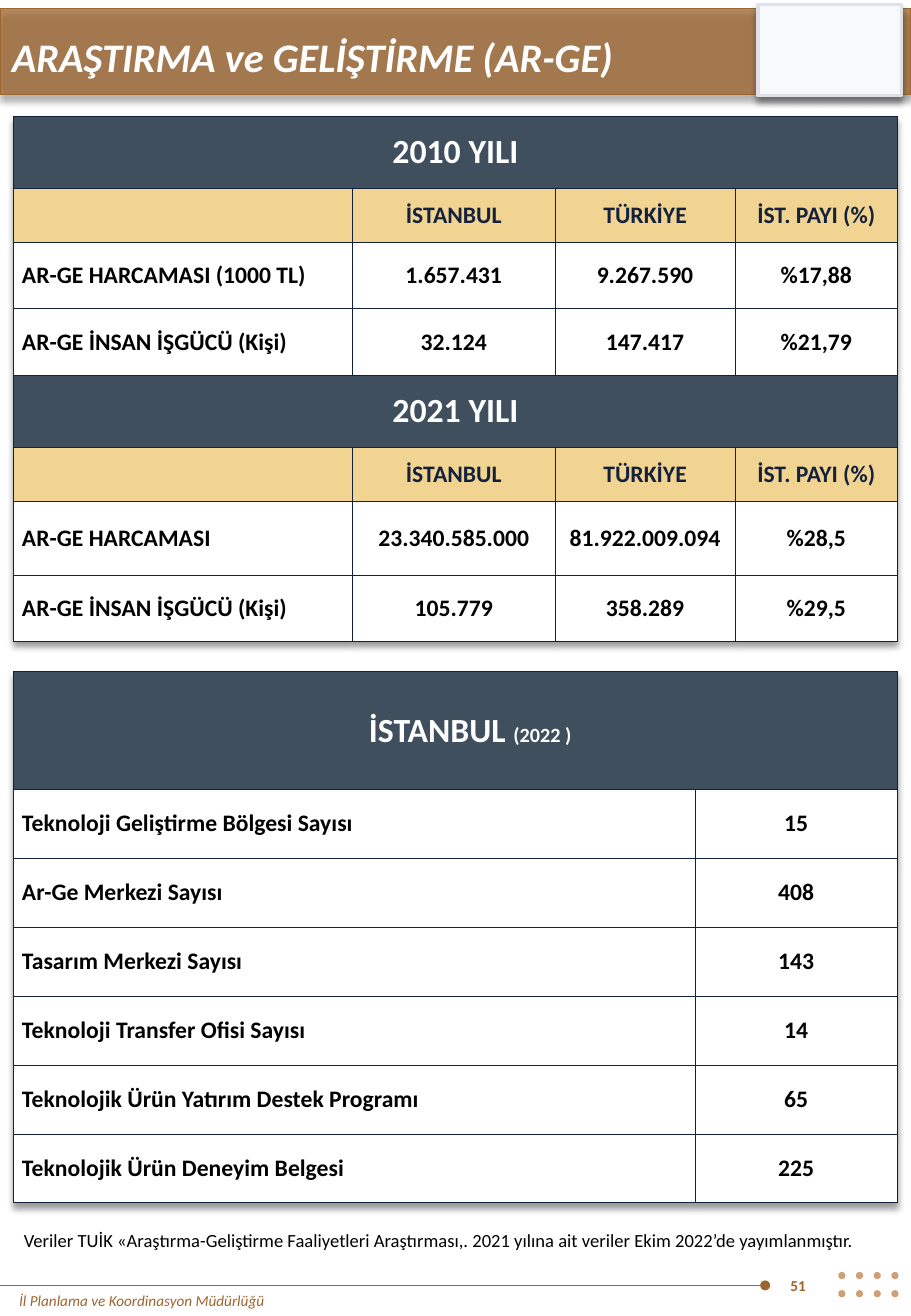
from lxml import etree
from pptx import Presentation
from pptx.dml.color import RGBColor
from pptx.enum import shapes, text
from pptx.oxml import ns, parse_xml
from pptx.util import Cm, Pt

# Content
TITLE = "ARAŞTIRMA ve GELİŞTİRME (AR-GE)"
OFFICE = "İl Planlama ve Koordinasyon Müdürlüğü"
PAGE = "51"
NOTE = ("Veriler TUİK «Araştırma-Geliştirme Faaliyetleri Araştırması,. "
        "2021 yılına ait veriler Ekim 2022’de yayımlanmıştır.")
HEADINGS = ["", "İSTANBUL", "TÜRKİYE", "İST. PAYI (%)"]
SPENDING = [
    ["2010 YILI"],
    HEADINGS,
    ["AR-GE HARCAMASI (1000 TL)", "1.657.431", "9.267.590", "%17,88"],
    ["AR-GE İNSAN İŞGÜCÜ (Kişi)", "32.124", "147.417", "%21,79"],
    ["2021 YILI"],
    HEADINGS,
    ["AR-GE HARCAMASI", "23.340.585.000", "81.922.009.094", "%28,5"],
    ["AR-GE İNSAN İŞGÜCÜ (Kişi)", "105.779", "358.289", "%29,5"],
]
CENTRES = [
    ["İSTANBUL "],
    ["Teknoloji Geliştirme Bölgesi Sayısı", "15"],
    ["Ar-Ge Merkezi Sayısı", "408"],
    ["Tasarım Merkezi Sayısı", "143"],
    ["Teknoloji Transfer Ofisi Sayısı", "14"],
    ["Teknolojik Ürün Yatırım Destek Programı", "65"],
    ["Teknolojik Ürün Deneyim Belgesi", "225"],
]
CENTRES_YEAR = "(2022 )"

# Colours
BROWN = RGBColor(0x9E, 0x65, 0x2E)
TAN = RGBColor(0xCD, 0xA0, 0x77)
SLATE = RGBColor(0x40, 0x4F, 0x5D)
SAND = RGBColor(0xF2, 0xD4, 0x92)
NAVY = RGBColor(0x14, 0x21, 0x3D)
PALE = RGBColor(0xF8, 0xF9, 0xFA)
GREY = RGBColor(0xDE, 0xE2, 0xE6)
WHITE = RGBColor(0xFF, 0xFF, 0xFF)
BLACK = RGBColor(0, 0, 0)

FONT = "Calibri"
WIDTH, HEIGHT = 19.05, 27.51
MIDDLE = text.MSO_ANCHOR.MIDDLE
CENTER = text.PP_ALIGN.CENTER


def soft_shadow():
    return parse_xml(
        f'<a:effectLst {ns.nsdecls("a")}><a:outerShdw blurRad="50800" dist="38100" '
        'dir="5400000" algn="t" rotWithShape="0"><a:srgbClr val="000000">'
        '<a:alpha val="40000"/></a:srgbClr></a:outerShdw></a:effectLst>')


def style(r, size, color, bold=False, italic=False):
    r.font.name, r.font.size = FONT, Pt(size)
    r.font.bold, r.font.italic = bold, italic
    r.font.color.rgb = color


def add_shape(s, kind, box, fill, line=None, weight=1):
    sp = s.shapes.add_shape(kind, *map(Cm, box))
    sp.shadow.inherit = False
    sp.fill.solid()
    sp.fill.fore_color.rgb = fill
    if line is None:
        sp.line.fill.background()
    else:
        sp.line.color.rgb, sp.line.width = line, Pt(weight)
    return sp


def add_panel(s, box, fill, line, weight):
    sp = add_shape(s, shapes.MSO_SHAPE.RECTANGLE, box, fill, line, weight)
    props = sp._element.spPr
    props.replace(props.find(ns.qn("a:effectLst")), soft_shadow())
    return sp


def add_text(s, box, words, size, color, **look):
    tf = s.shapes.add_textbox(*map(Cm, box)).text_frame
    tf.word_wrap, tf.vertical_anchor = True, MIDDLE
    tf.text = words
    style(tf.paragraphs[0].runs[0], size, color, **look)


def fill_cell(cell, words, fill, size, color, centred):
    props = cell._tc.get_or_add_tcPr()
    for side in ("lnL", "lnR", "lnT", "lnB"):
        props.append(parse_xml(
            f'<a:{side} {ns.nsdecls("a")} w="3175"><a:solidFill>'
            f'<a:srgbClr val="{NAVY}"/></a:solidFill></a:{side}>'))
    cell.fill.solid()
    cell.fill.fore_color.rgb = fill
    cell.vertical_anchor = MIDDLE
    cell.margin_left = cell.margin_right = Cm(0.18)
    cell.margin_top = cell.margin_bottom = Cm(0.1)
    cell.text = words
    p = cell.text_frame.paragraphs[0]
    p.alignment = CENTER if centred else text.PP_ALIGN.LEFT
    for r in p.runs:
        style(r, size, color, bold=True)


def add_grid(s, top, widths, heights, rows):
    table = s.shapes.add_table(len(rows), len(widths), Cm(0.28), Cm(top),
                               Cm(sum(widths)), Cm(sum(heights))).table
    table.first_row = table.horz_banding = False
    table._tbl.tblPr.insert(0, soft_shadow())
    for column, width in zip(table.columns, widths):
        column.width = Cm(width)
    for i, (row, height) in enumerate(zip(rows, heights)):
        table.rows[i].height = Cm(height)
        banner = len(row) == 1
        if banner:
            look = SLATE, 20, WHITE
            table.cell(i, 0).merge(table.cell(i, len(widths) - 1))
        elif row is HEADINGS:
            look = SAND, 14, NAVY
        else:
            look = WHITE, 14, BLACK
        for j, words in enumerate(row):
            fill_cell(table.cell(i, j), words, *look, centred=banner or j > 0)
    return table


prs = Presentation()
prs.slide_width, prs.slide_height = Cm(WIDTH), Cm(HEIGHT)
s = prs.slides.add_slide(prs.slide_layouts[6])

# Title bar with an empty badge
bar = add_panel(s, (0, 0.18, WIDTH, 1.8), BROWN, BROWN, 1)
bar_color = bar._element.spPr.find(ns.qn("a:solidFill"))[0]
etree.SubElement(bar_color, ns.qn("a:alpha")).set("val", "75000")
add_panel(s, (15.85, 0.1, 3, 1.9), PALE, GREY, 2)
add_text(s, (0, 0.54, 15.8, 1.27), TITLE, 24, WHITE, bold=True, italic=True)

# Footer rule, dots and labels
rule = s.shapes.add_connector(shapes.MSO_CONNECTOR.STRAIGHT,
                              Cm(16), Cm(26.87), Cm(0), Cm(26.87))
rule.line.color.rgb, rule.line.width = BROWN, Pt(0.5)
etree.SubElement(rule.line._get_or_add_ln(), ns.qn("a:headEnd")).set("type", "oval")
etree.SubElement(rule._element.spPr, ns.qn("a:effectLst"))
for row in range(2):
    for col in range(4):
        add_shape(s, shapes.MSO_SHAPE.OVAL,
                  (17.53 + 0.37 * col, 26.59 + 0.38 * row, 0.15, 0.15), TAN)
add_text(s, (0.15, 26.87, 11.9, 0.64), OFFICE, 9, BROWN, italic=True)
add_text(s, (16.28, 26.34, 1.27, 1.07), PAGE, 9, BROWN, bold=True)

# Spending and workforce table
add_grid(s, 2.43, [7.09, 4.24, 3.76, 3.4],
         [1.5, 1.14, 1.38, 1.4, 1.5, 1.14, 1.54, 1.37], SPENDING)

# Table of centres, its heading set slightly right of the middle
centres = add_grid(s, 14.04, [14.25, 4.24], [2.46] + [1.44] * 6, CENTRES)
heading = centres.cell(0, 0)
heading.margin_left = Cm(0.8)
r = heading.text_frame.paragraphs[0].add_run()
r.text = CENTRES_YEAR
style(r, 12, WHITE, bold=True)

# Data note
add_text(s, (0.25, 25.55, 18.6, 0.75), NOTE, 11, BLACK)

prs.save("out.pptx")
